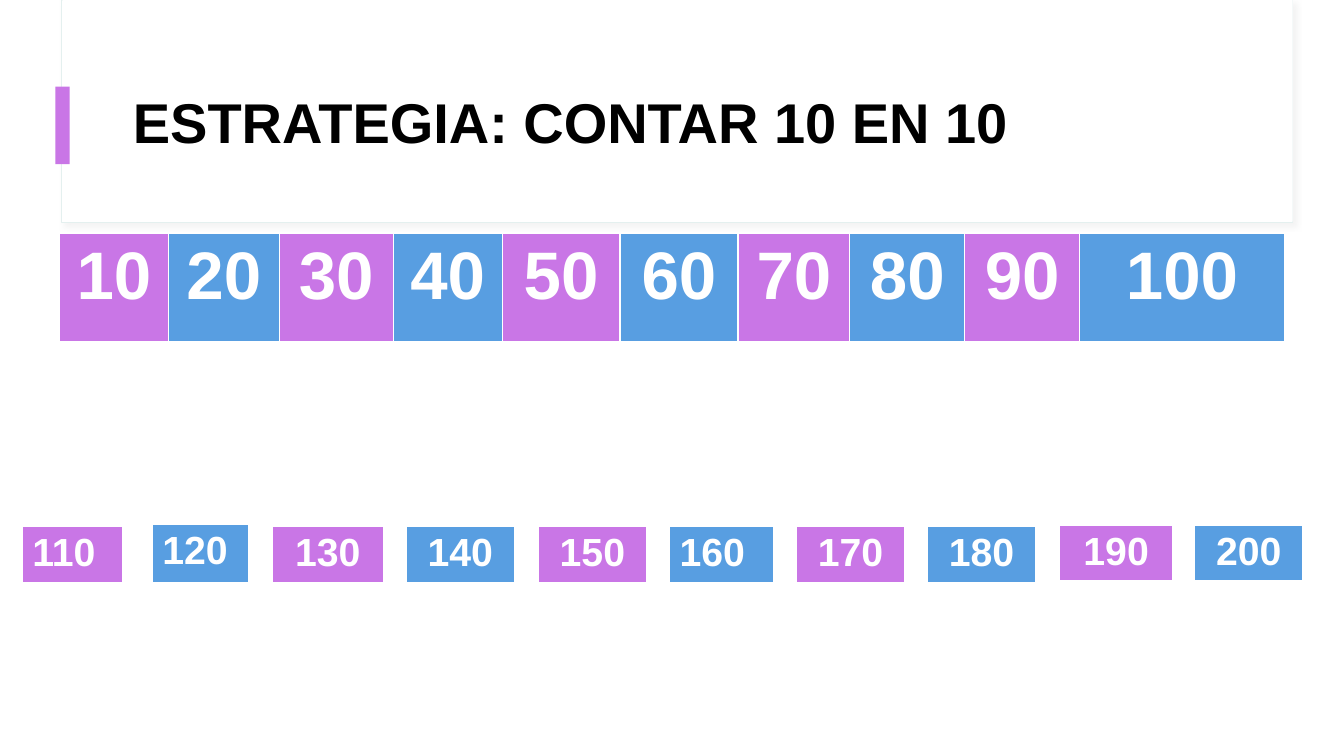
import pptx
import pptx.util
import pptx.dml.color
import pptx.enum.shapes
import pptx.enum.text
import pptx.oxml
import pptx.oxml.ns
from pptx.util import Inches

PURPLE, BLUE, WHITE, BLACK = "C976E6", "589EE1", "FFFFFF", "000000"
FONT = "Arial"
NS = pptx.oxml.ns.nsdecls("a")
CENTER = pptx.enum.text.PP_ALIGN.CENTER
LEFT = pptx.enum.text.PP_ALIGN.LEFT


def rgb(color):
    return pptx.dml.color.RGBColor.from_string(color)


def add_run(p, text, size, color):
    r = p.add_run()
    r.text = text
    r.font.name = FONT
    r.font.size = pptx.util.Pt(size)
    r.font.bold = True
    r.font.color.rgb = rgb(color)


def add_rect(s, left, top, width, height, fill, line=None):
    sp = s.shapes.add_shape(pptx.enum.shapes.MSO_SHAPE.RECTANGLE, Inches(left),
                            Inches(top), Inches(width), Inches(height))
    sp.shadow.inherit = False
    sp.fill.solid()
    sp.fill.fore_color.rgb = rgb(fill)
    if line:
        sp.line.color.rgb = rgb(line)
        sp.line.width = pptx.util.Pt(0.75)
    else:
        sp.line.fill.background()
    return sp


def add_soft_shadow(sp):
    effects = sp.element.spPr.find(pptx.oxml.ns.qn("a:effectLst"))
    effects.append(pptx.oxml.parse_xml(
        f'<a:outerShdw {NS} blurRad="50800" dist="38100" dir="2700000" algn="tl" rotWithShape="0">'
        '<a:srgbClr val="D9D9D9"><a:alpha val="30000"/></a:srgbClr></a:outerShdw>'))


def add_title(s, text):
    sp = s.shapes.add_textbox(Inches(1.22), Inches(0.6), Inches(11.12), Inches(1.29))
    tf = sp.text_frame
    tf.word_wrap = True
    tf.vertical_anchor = pptx.enum.text.MSO_ANCHOR.MIDDLE
    p = tf.paragraphs[0]
    p.line_spacing = 0.9
    add_run(p, text, 40, BLACK)


def set_borders(cell):
    tc_pr = cell._tc.get_or_add_tcPr()
    for side, points in (("L", 1), ("R", 1), ("T", 1), ("B", 3)):
        tc_pr.append(pptx.oxml.parse_xml(
            f'<a:ln{side} {NS} w="{pptx.util.Pt(points)}"><a:solidFill>'
            f'<a:srgbClr val="{WHITE}"/></a:solidFill></a:ln{side}>'))


def add_number_table(s, left, top, widths, height, row_height, numbers, size, align=CENTER):
    frame = s.shapes.add_table(1, len(widths), Inches(left), Inches(top),
                               Inches(sum(widths)), Inches(height))
    table = frame.table
    table.first_row = False
    table.horz_banding = False
    table.rows[0].height = Inches(row_height)
    frame.height = Inches(height)
    for column, cell, width, number in zip(table.columns, table.rows[0].cells, widths, numbers):
        column.width = Inches(width)
        set_borders(cell)
        cell.fill.solid()
        # Odd tens are purple, even tens are blue
        cell.fill.fore_color.rgb = rgb(PURPLE if number // 10 % 2 else BLUE)
        p = cell.text_frame.paragraphs[0]
        p.alignment = align
        add_run(p, str(number), size, WHITE)


def main():
    prs = pptx.Presentation()
    prs.slide_width, prs.slide_height = Inches(13.33), Inches(7.5)
    s = prs.slides.add_slide(prs.slide_layouts[6])

    # Title panel with accent bar
    add_soft_shadow(add_rect(s, 0.61, 0, 12.21, 2.21, WHITE, "E4F0EF"))
    add_rect(s, 0.62, 0, 12.2, 2.2, WHITE)
    add_rect(s, 0.55, 0.86, 0.14, 0.77, PURPLE)
    add_title(s, "ESTRATEGIA: CONTAR 10 EN 10")

    # Strip from 10 to 100
    strip_widths = [1.08, 1.1, 1.13, 1.08, 1.17, 1.17, 1.11, 1.14, 1.14, 2.03]
    add_number_table(s, 0.59, 2.32, strip_widths, 1.08, 1.08, range(10, 101, 10), 48)

    # Separate cards from 110 to 200: left, top, width, row height, alignment
    cards = [
        (0.22, 5.22, 1, 0.41, LEFT),
        (1.51, 5.2, 0.96, 0.59, LEFT),
        (2.7, 5.22, 1.1, 0.41, CENTER),
        (4.03, 5.22, 1.07, 0.41, CENTER),
        (5.34, 5.22, 1.07, 0.41, CENTER),
        (6.64, 5.22, 1.03, 0.41, LEFT),
        (7.9, 5.22, 1.07, 0.41, CENTER),
        (9.2, 5.22, 1.07, 0.41, CENTER),
        (10.51, 5.21, 1.12, 0.41, CENTER),
        (11.85, 5.21, 1.07, 0.41, CENTER),
    ]
    for number, (left, top, width, row_height, align) in zip(range(110, 201, 10), cards):
        add_number_table(s, left, top, [width], max(0.57, row_height), row_height,
                         [number], 28, align)

    prs.save("out.pptx")


if __name__ == "__main__":
    main()
